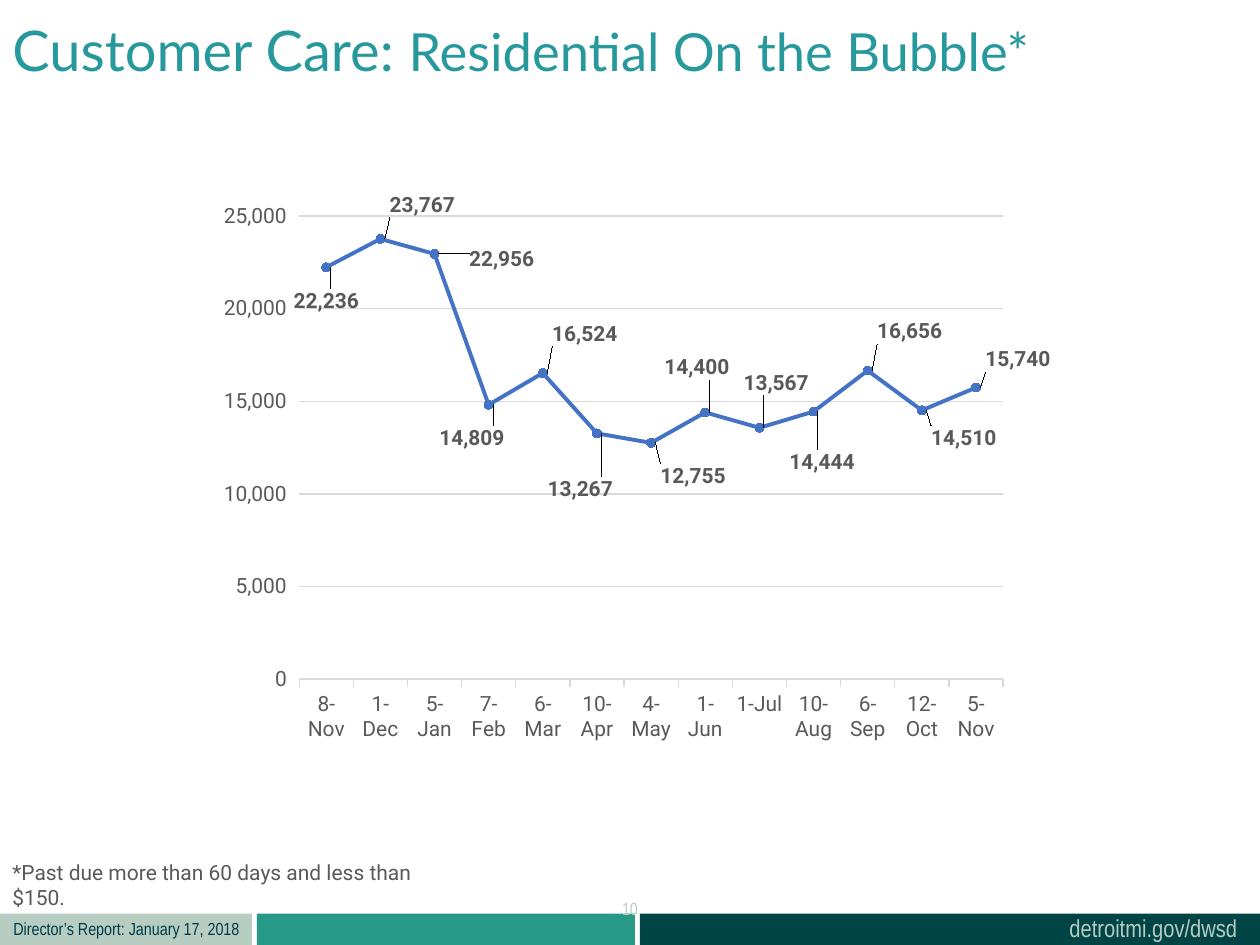
import pptx
import pptx.chart.data
import pptx.dml.color
import pptx.enum.chart
import pptx.enum.shapes
import pptx.enum.text
import pptx.oxml
import pptx.oxml.ns
import pptx.util
from dataclasses import dataclass

Cm = pptx.util.Cm
Pt = pptx.util.Pt
ChartEnum = pptx.enum.chart
CHART_NS = 'xmlns:c="http://schemas.openxmlformats.org/drawingml/2006/chart"'


@dataclass(frozen=True)
class Theme:
    teal: str = "279989"
    deep_green: str = "004445"
    sage: str = "B7CDC2"
    navy: str = "003B49"
    title_teal: str = "27999D"
    grey: str = "595959"
    grid: str = "D9D9D9"
    line_blue: str = "4472C4"
    title_font: str = "Lato"
    body_font: str = "Roboto"
    footer_font: str = "Arial Narrow"
    title_size: int = 32
    subtitle_size: int = 30
    site_size: int = 14
    body_size: int = 12
    footer_size: int = 10


def rgb(color):
    return pptx.dml.color.RGBColor.from_string(color)


def manual_layout(x, y, size=None):
    """Chart layout: an offset for labels, or the inner plot area with a size."""
    fields = [("x", x), ("y", y)]
    if size:
        fields = [("layoutTarget", "inner"), ("xMode", "edge"), ("yMode", "edge"),
                  *fields, ("w", size[0]), ("h", size[1])]
    body = "".join(f'<c:{tag} val="{value}"/>' for tag, value in fields)
    return pptx.oxml.parse_xml(
        f"<c:layout {CHART_NS}><c:manualLayout>{body}</c:manualLayout></c:layout>")


class ReportSlide:
    def __init__(self, slide, theme):
        self.slide = slide
        self.theme = theme

    def style(self, font, name, size, color, bold=None):
        font.name, font.size, font.bold = name, Pt(size), bold
        font.color.rgb = rgb(color)

    def bar(self, left, width, color):
        bar = self.slide.shapes.add_shape(
            pptx.enum.shapes.MSO_SHAPE.RECTANGLE, Cm(left), Cm(18.42), Cm(width), Cm(0.64))
        bar.shadow.inherit = False
        bar.fill.solid()
        bar.fill.fore_color.rgb = rgb(color)
        bar.line.fill.background()

    def text(self, left, top, width, height, runs, wrap=False):
        """Each run is (text, font name, size, colour)."""
        box = self.slide.shapes.add_textbox(Cm(left), Cm(top), Cm(width), Cm(height))
        frame = box.text_frame
        frame.word_wrap = wrap
        frame.auto_size = pptx.enum.text.MSO_AUTO_SIZE.SHAPE_TO_FIT_TEXT
        for words, name, size, color in runs:
            run = frame.paragraphs[0].add_run()
            run.text = words
            self.style(run.font, name, size, color)

    def axis(self, axis):
        theme = self.theme
        axis.major_tick_mark = ChartEnum.XL_TICK_MARK.OUTSIDE
        axis.minor_tick_mark = ChartEnum.XL_TICK_MARK.NONE
        self.style(axis.tick_labels.font, theme.body_font, theme.body_size, theme.grey)

    def hairline(self, line):
        line.color.rgb = rgb(self.theme.grid)
        line.width = Pt(0.75)

    def line_chart(self, left, top, width, height, readings):
        """Each reading is (date serial, value, label offset x, label offset y)."""
        theme = self.theme
        data = pptx.chart.data.CategoryChartData(number_format="#,##0")
        data.categories = [reading[0] for reading in readings]
        data.categories.number_format = r"d\-mmm"
        data.add_series("Series 1", [reading[1] for reading in readings])
        chart = self.slide.shapes.add_chart(
            ChartEnum.XL_CHART_TYPE.LINE_MARKERS,
            Cm(left), Cm(top), Cm(width), Cm(height), data).chart
        chart.has_legend = False
        chart.has_title = False
        self.style(chart.font, "Calibri", theme.footer_size, "000000")

        # Plot area
        plot_area = chart.plots[0]._element.getparent()
        for old_layout in plot_area.findall(pptx.oxml.ns.qn("c:layout")):
            plot_area.remove(old_layout)
        plot_area.insert(0, manual_layout(0.106, 0.041, (0.84, 0.828)))

        # Axes: dates are evenly spaced categories
        dates, counts = chart.category_axis, chart.value_axis
        self.axis(dates)
        self.axis(counts)
        dates.tick_labels.number_format = r"d\-mmm"
        dates.tick_labels.number_format_is_linked = False
        dates._element.find(pptx.oxml.ns.qn("c:auto")).set("val", "0")
        self.hairline(dates.format.line)
        counts.minimum_scale, counts.maximum_scale, counts.major_unit = 0, 25000, 5000
        counts.tick_labels.number_format = "#,##0"
        counts.tick_labels.number_format_is_linked = False
        counts.format.line.fill.background()
        counts.has_major_gridlines = True
        self.hairline(counts.major_gridlines.format.line)

        # Series
        chart.plots[0].vary_by_categories = False
        series = chart.plots[0].series[0]
        series.smooth = False
        series.format.line.color.rgb = rgb(theme.line_blue)
        series.format.line.width = Pt(2.25)
        series.marker.style = ChartEnum.XL_MARKER_STYLE.CIRCLE
        series.marker.size = 5
        series.marker.format.fill.solid()
        series.marker.format.fill.fore_color.rgb = rgb(theme.line_blue)
        series.marker.format.line.color.rgb = rgb(theme.line_blue)

        # Value labels, each moved off the line
        labels = series.data_labels
        labels.show_value = True
        labels.number_format = "#,##0"
        labels.number_format_is_linked = False
        self.style(labels.font, theme.body_font, theme.body_size, theme.grey, True)
        for index, (_, _, dx, dy) in enumerate(readings):
            label = series.points[index].data_label
            self.style(label.font, theme.body_font, theme.body_size, theme.grey, True)
            label.position = ChartEnum.XL_LABEL_POSITION.RIGHT
            label_xml = labels._element.findall(pptx.oxml.ns.qn("c:dLbl"))[index]
            label_xml.insert(1, manual_layout(dx, dy))


READINGS = [
    (42682, 22236, -0.05, 0.06),
    (42705, 23767, 0, -0.06),
    (42740, 22956, 0.03, 0.01),
    (42773, 14809, -0.07, 0.06),
    (42800, 16524, 0, -0.07),
    (42835, 13267, -0.07, 0.1),
    (42859, 12755, 0, 0.06),
    (42887, 14400, -0.06, -0.08),
    (42917, 13567, -0.03, -0.08),
    (42957, 14444, -0.04, 0.09),
    (42984, 16656, 0, -0.07),
    (43020, 14510, 0, 0.05),
    (43044, 15740, 0, -0.05),
]


def main():
    deck = pptx.Presentation()
    deck.slide_width, deck.slide_height = Cm(25.4), Cm(19.05)
    theme = Theme()
    report = ReportSlide(deck.slides.add_slide(deck.slide_layouts[6]), theme)

    # Footer band
    report.bar(5.18, 7.62, theme.teal)
    report.bar(12.9, 12.7, theme.deep_green)
    report.bar(0, 5.08, theme.sage)
    report.text(21.31, 18.29, 3.94, 0.86,
                [("detroitmi.gov/dwsd", theme.footer_font, theme.site_size, theme.sage)])
    report.text(0.02, 18.39, 5.08, 0.69,
                [("Director’s Report: January 17, 2018",
                  theme.footer_font, theme.footer_size, theme.navy)])

    # Title
    report.text(0, 0.18, 25.4, 1.63, [
        ("Customer Care: ", theme.title_font, theme.title_size, theme.title_teal),
        ("Residential On the Bubble*", theme.title_font, theme.subtitle_size, theme.title_teal),
    ], wrap=True)

    # Past-due accounts by date
    report.line_chart(4.24, 3.89, 16.94, 11.28, READINGS)

    # Footnote and page number
    report.text(0, 17.2, 9.63, 0.76,
                [("*Past due more than 60 days and less than $150.",
                  theme.body_font, theme.body_size, theme.grey)], wrap=True)
    report.text(12.29, 17.98, 0.84, 0.69,
                [("10", theme.footer_font, theme.footer_size, theme.sage)])

    deck.save("out.pptx")


if __name__ == "__main__":
    main()
